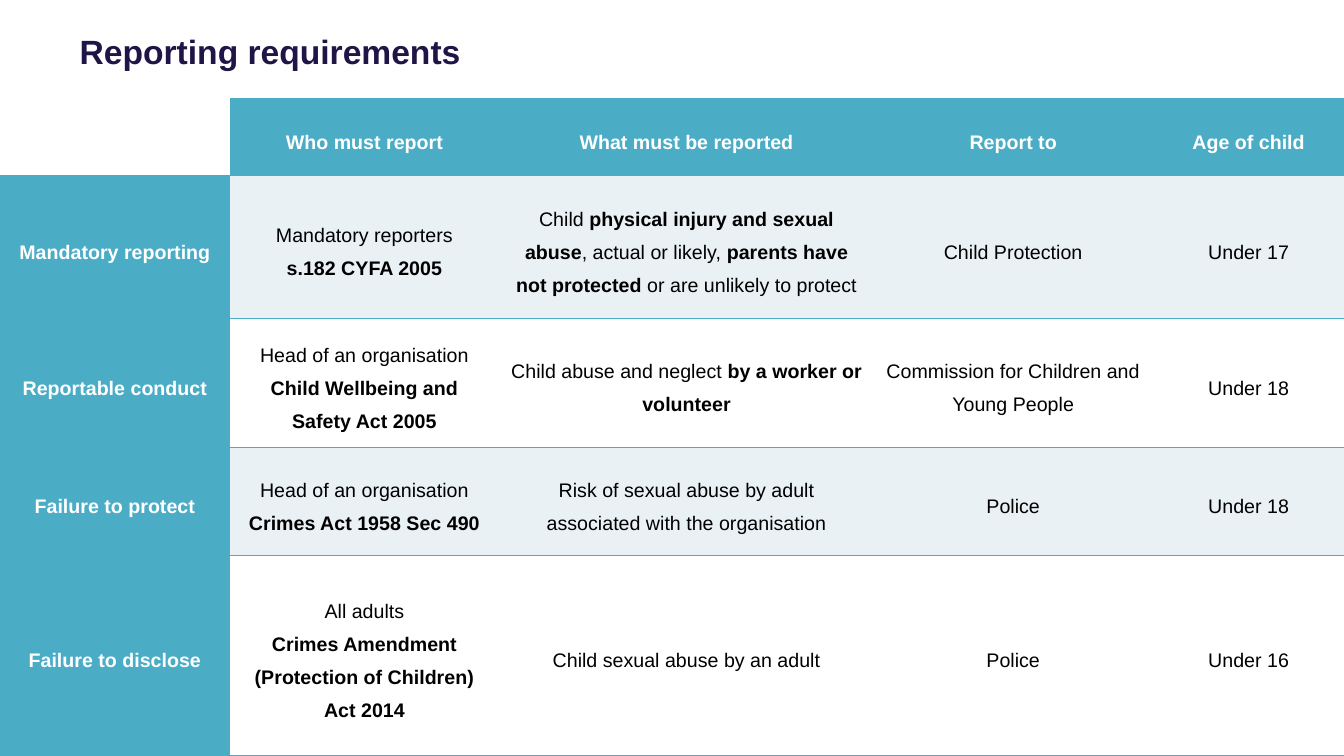
from dataclasses import dataclass

from lxml.etree import SubElement
from pptx import Presentation
from pptx.dml.color import RGBColor
from pptx.enum.text import MSO_ANCHOR, PP_ALIGN
from pptx.oxml.ns import qn
from pptx.slide import Slide
from pptx.table import Table, _Cell
from pptx.text.text import _Paragraph
from pptx.util import Inches, Pt

FONT = "Arial"
NAVY, TEAL, PALE, WHITE, BLACK = "201547", "4BACC6", "E9F1F5", "FFFFFF", "000000"
NO_STYLE_NO_GRID = "{2D5ABB26-0587-4C30-8999-92F81FD0307C}"
COLUMN_WIDTHS = [2.28, 2.67, 3.72, 2.76, 1.91]
HEADINGS = ["", "Who must report", "What must be reported", "Report to", "Age of child"]
HEADING_HEIGHT = 0.76


@dataclass(frozen=True)
class Span:
    text: str
    bold: bool = False


@dataclass(frozen=True)
class Duty:
    name: str
    height: float
    reporter: str
    law: str
    matter: list[Span]
    recipient: str
    age: str


DUTIES = [
    Duty("Mandatory reporting", 1.42, "Mandatory reporters", "s.182 CYFA 2005",
         [Span("Child "), Span("physical injury and sexual abuse", True),
          Span(", actual or likely, "), Span("parents have not protected", True),
          Span(" or are unlikely to protect")],
         "Child Protection", "Under 17"),
    Duty("Reportable conduct", 1.28, "Head of an organisation",
         "Child Wellbeing and Safety Act 2005",
         [Span("Child abuse and neglect "), Span("by a worker or volunteer", True)],
         "Commission for Children and Young People", "Under 18"),
    Duty("Failure to protect", 1.07, "Head of an organisation", "Crimes Act 1958 Sec 490",
         [Span("Risk of sexual abuse by adult associated with the organisation")],
         "Police", "Under 18"),
    Duty("Failure to disclose", 1.99, "All adults",
         "Crimes Amendment (Protection of Children) Act 2014",
         [Span("Child sexual abuse by an adult")], "Police", "Under 16"),
]


def rgb(color: str) -> RGBColor:
    return RGBColor.from_string(color)


def add_run(paragraph: _Paragraph, span: Span, size: float, color: str) -> None:
    run = paragraph.add_run()
    run.text = span.text
    run.font.name = FONT
    run.font.size = Pt(size)
    run.font.bold = span.bold
    run.font.color.rgb = rgb(color)


def add_border(cell: _Cell, side: str) -> None:
    """Draw a teal line on one side of a cell: L, R, T or B; call before filling."""
    line = SubElement(cell._tc.get_or_add_tcPr(), qn(f"a:ln{side}"), w=str(Pt(1)))
    fill = SubElement(line, qn("a:solidFill"))
    SubElement(fill, qn("a:srgbClr"), val=TEAL)


def format_cell(cell: _Cell, lines: list[list[Span]], fill: str, color: str,
                borders: str) -> None:
    cell.vertical_anchor = MSO_ANCHOR.MIDDLE
    for side in borders:
        add_border(cell, side)
    cell.fill.solid()
    cell.fill.fore_color.rgb = rgb(fill)
    for index, spans in enumerate(lines):
        frame = cell.text_frame
        paragraph = frame.add_paragraph() if index else frame.paragraphs[0]
        paragraph.alignment = PP_ALIGN.CENTER
        paragraph.line_spacing = 1.5
        for span in spans:
            add_run(paragraph, span, 14, color)


def add_title(slide: Slide) -> None:
    title = slide.shapes.title
    title.left, title.top = Inches(0.79), Inches(0)
    title.width, title.height = Inches(9.45), Inches(0.98)
    frame = title.text_frame
    frame.margin_left = frame.margin_right = frame.margin_top = frame.margin_bottom = 0
    frame.vertical_anchor = MSO_ANCHOR.MIDDLE
    frame.word_wrap = True
    paragraph = frame.paragraphs[0]
    paragraph.alignment = PP_ALIGN.LEFT
    paragraph.line_spacing = 1.1
    add_run(paragraph, Span("Reporting requirements", True), 24, NAVY)


def add_empty_table(slide: Slide) -> Table:
    heights = [HEADING_HEIGHT] + [duty.height for duty in DUTIES]
    table = slide.shapes.add_table(
        len(heights), len(COLUMN_WIDTHS), Inches(0), Inches(0.98),
        Inches(13.33), Inches(sum(heights))).table
    table.first_row = table.horz_banding = False
    table._tbl.tblPr.find(qn("a:tableStyleId")).text = NO_STYLE_NO_GRID
    for column, width in zip(table.columns, COLUMN_WIDTHS):
        column.width = Inches(width)
    for row, height in zip(table.rows, heights):
        row.height = Inches(height)
    return table


def add_duties_table(slide: Slide) -> None:
    table = add_empty_table(slide)
    for column, heading in enumerate(HEADINGS):
        lines = [[Span(heading, True)]] if heading else []
        format_cell(table.cell(0, column), lines, TEAL if heading else WHITE, WHITE,
                    "TB" if heading else "B")
    for row, duty in enumerate(DUTIES, start=1):
        format_cell(table.cell(row, 0), [[Span(duty.name, True)]], TEAL, WHITE, "LTB")
        contents = [
            [[Span(duty.reporter)], [Span(duty.law, True)]],
            [duty.matter],
            [[Span(duty.recipient)]],
            [[Span(duty.age)]],
        ]
        for column, lines in enumerate(contents, start=1):
            borders = "RTB" if column == len(contents) else "TB"
            format_cell(table.cell(row, column), lines, PALE if row % 2 else WHITE,
                        BLACK, borders)


def main() -> None:
    presentation = Presentation()
    presentation.slide_width = Inches(13.33)
    presentation.slide_height = Inches(7.5)
    slide = presentation.slides.add_slide(presentation.slide_layouts[5])
    add_title(slide)
    add_duties_table(slide)
    presentation.save("out.pptx")


if __name__ == "__main__":
    main()
